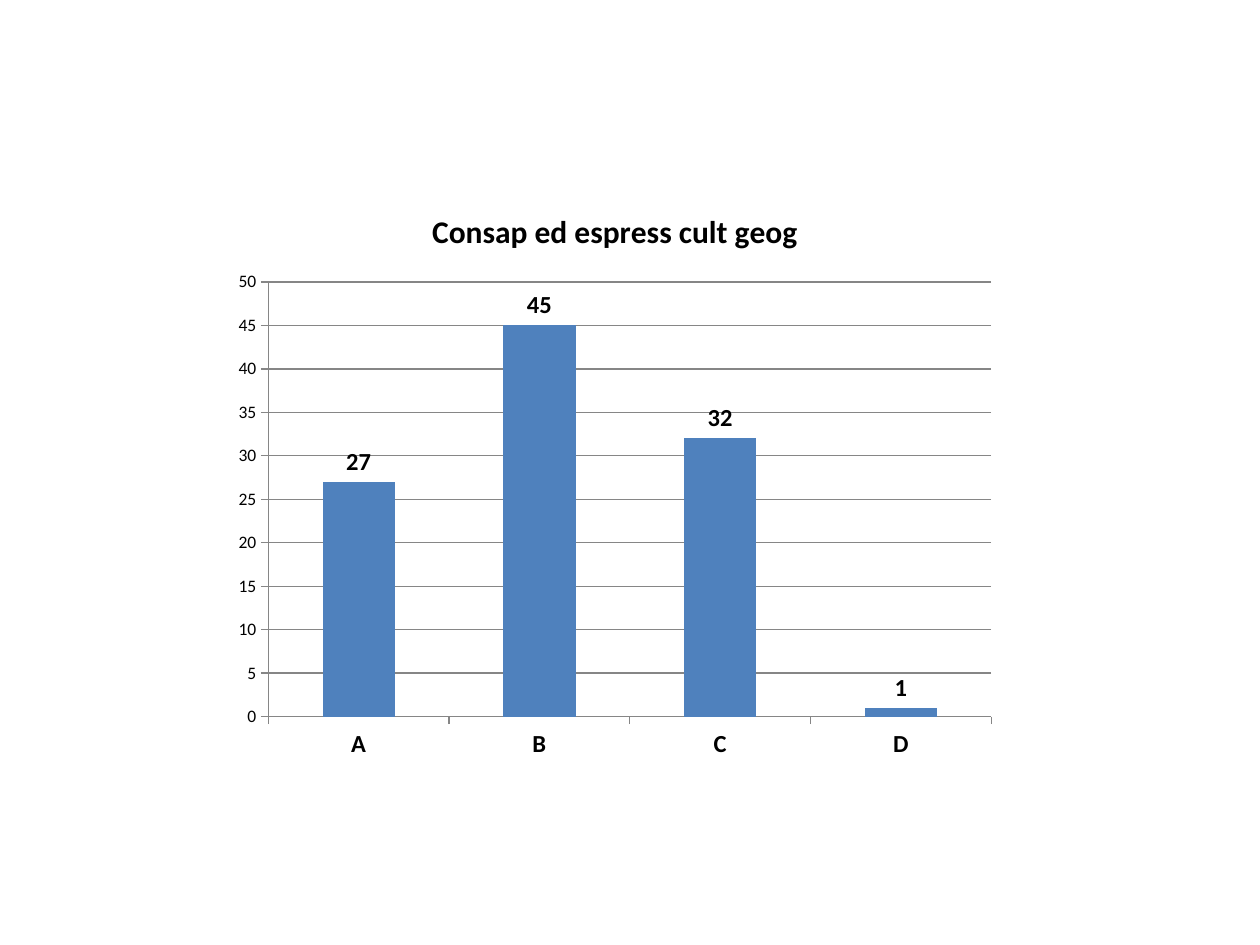
"""Build a slide with a column chart of geography results by level."""
from pptx import Presentation
from pptx.chart.data import CategoryChartData
from pptx.dml.color import RGBColor
from pptx.enum.chart import XL_CHART_TYPE, XL_LABEL_POSITION, XL_TICK_MARK
from pptx.util import Pt

COLUMNS = XL_CHART_TYPE.COLUMN_CLUSTERED
OUTSIDE_END = XL_LABEL_POSITION.OUTSIDE_END
TICK_OUTSIDE = XL_TICK_MARK.OUTSIDE
TICK_NONE = XL_TICK_MARK.NONE

TITLE = "Consap ed espress cult geog"
RESULTS = {"A": 27, "B": 45, "C": 32, "D": 1}

BLACK = RGBColor(0x00, 0x00, 0x00)
GRAY = RGBColor(0x86, 0x86, 0x86)
BLUE = RGBColor(0x4F, 0x81, 0xBD)

PX = 914400 // 126
SLIDE_SIZE = (1260, 945)
CHART_BOX = (223, 185, 784, 586)


def style_font(font, size, bold):
    font.name = "Calibri"
    font.size = Pt(size)
    font.bold = bold
    font.color.rgb = BLACK


def style_axis(axis, size, bold):
    axis.major_tick_mark = TICK_OUTSIDE
    axis.minor_tick_mark = TICK_NONE
    axis.format.line.color.rgb = GRAY
    axis.format.line.width = Pt(0.75)
    style_font(axis.tick_labels.font, size, bold)


def add_results_chart(slide):
    data = CategoryChartData()
    data.categories = list(RESULTS)
    data.add_series(TITLE, list(RESULTS.values()))
    box = [length * PX for length in CHART_BOX]
    chart = slide.shapes.add_chart(COLUMNS, *box, data).chart
    style_font(chart.font, 10, False)
    chart.has_legend = False

    chart.has_title = True
    title = chart.chart_title.text_frame.paragraphs[0].add_run()
    title.text = TITLE
    style_font(title.font, 18, True)
    chart.chart_title.include_in_layout = False

    style_axis(chart.category_axis, 14, True)
    style_axis(chart.value_axis, 10, False)
    chart.value_axis.minimum_scale = 0
    chart.value_axis.maximum_scale = 50
    chart.value_axis.major_unit = 5
    chart.value_axis.has_major_gridlines = True
    gridline = chart.value_axis.major_gridlines.format.line
    gridline.color.rgb = GRAY
    gridline.width = Pt(0.75)

    plot = chart.plots[0]
    plot.gap_width = 150
    plot.vary_by_categories = False
    results = plot.series[0]
    results.format.fill.solid()
    results.format.fill.fore_color.rgb = BLUE
    labels = results.data_labels
    labels.show_value = True
    labels.position = OUTSIDE_END
    style_font(labels.font, 14, True)


def main():
    deck = Presentation()
    deck.slide_width, deck.slide_height = (side * PX for side in SLIDE_SIZE)
    slide = deck.slides.add_slide(deck.slide_layouts[6])
    add_results_chart(slide)
    deck.save("out.pptx")


if __name__ == "__main__":
    main()
